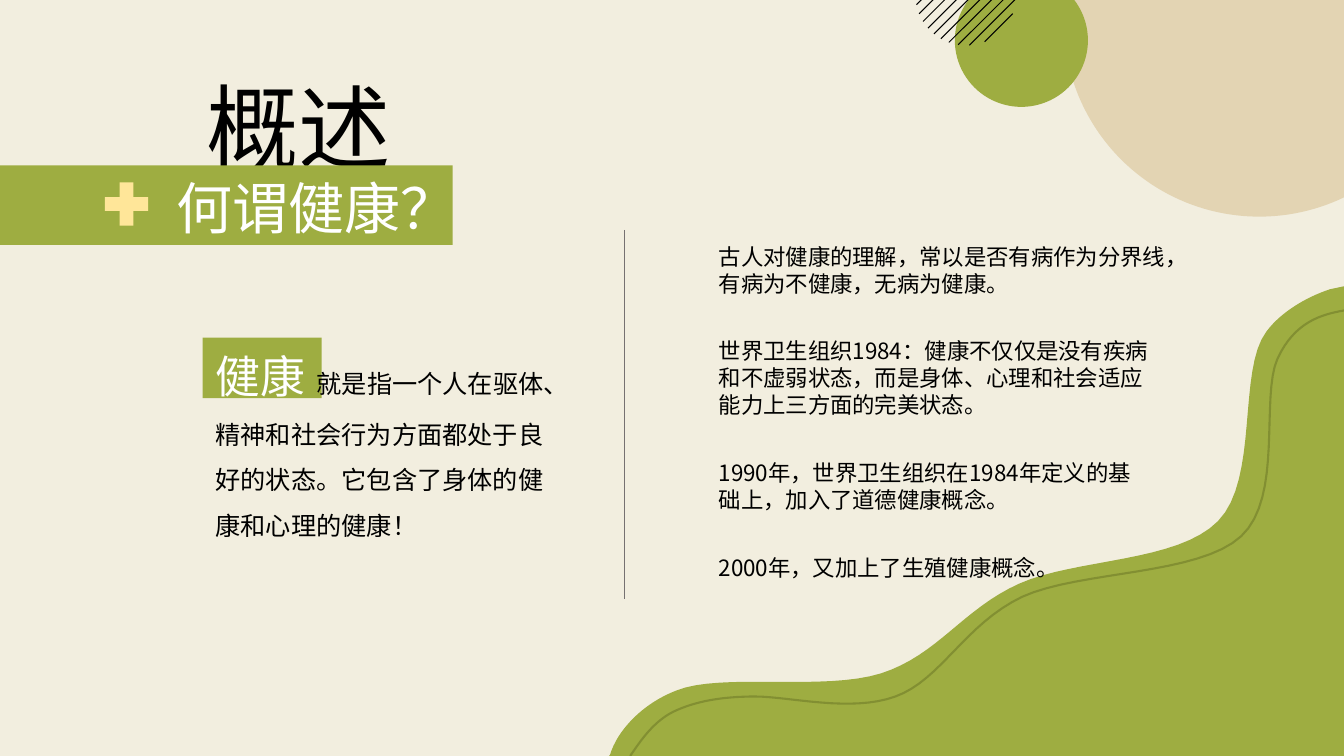
from dataclasses import dataclass
from math import acos, asin, cos, pi, sin, sqrt

from lxml.etree import SubElement
from pptx import Presentation
from pptx.dml.color import RGBColor
from pptx.enum.lang import MSO_LANGUAGE_ID
from pptx.enum.shapes import MSO_CONNECTOR, MSO_SHAPE
from pptx.enum.text import MSO_AUTO_SIZE, PP_ALIGN
from pptx.oxml.ns import qn
from pptx.util import Inches, Pt


@dataclass(frozen=True)
class Theme:
    cream: str = "F2EEDF"
    green: str = "9EAD41"
    moss: str = "828F32"
    sand: str = "E3D4B3"
    yellow: str = "FFE699"
    grey: str = "767171"
    black: str = "000000"
    white: str = "FFFFFF"
    font: str = "Noto Sans CJK SC"
    title_font: str = "Noto Sans CJK JP"
    title: int = 66
    heading: int = 40
    keyword: int = 32
    gap: int = 36
    lead: int = 18
    body: int = 16


THEME = Theme()
WIDTH, HEIGHT = 13.33, 7.5

# Each span is (text, size, colour)
TITLE = [("概述", THEME.title, THEME.black)]
HEADING = [("何谓健康？", THEME.heading, THEME.white)]
DEFINITION = [
    ("健康", THEME.keyword, THEME.white),
    (" ", THEME.gap, THEME.moss),
    ("就是指一个人在驱体、精神和社会行为方面都处于良好的状态。它包含了身体的健康和心理的健康！",
     THEME.lead, THEME.black),
]
# Each entry is (text, lines it fills, box width)
HISTORY = [
    ("古人对健康的理解，常以是否有病作为分界线，有病为不健康，无病为健康。", 2, 4.98),
    ("世界卫生组织1984：健康不仅仅是没有疾病和不虚弱状态，而是身体、心理和社会适应能力上三方面的完美状态。", 3, 4.49),
    ("1990年，世界卫生组织在1984年定义的基础上，加入了道德健康概念。", 2, 4.49),
    ("2000年，又加上了生殖健康概念。", 1, 3.9),
]
HISTORY_LEFT, HISTORY_TOP = 7.03, 2.36
LINE_HEIGHT, BOX_PADDING, HISTORY_GAP = 0.27, 0.1, 0.3

# A pair is a corner; six numbers are two curve handles and an end point
HILL = [
    (WIDTH, 2.84), (WIDTH, HEIGHT), (6.04, HEIGHT), (6.05, 7.49),
    (6.12, 7.25, 6.37, 6.98, 6.71, 6.85),
    (7.16, 6.67, 8.17, 6.86, 8.74, 6.68),
    (9.3, 6.5, 9.55, 6.04, 10.11, 5.79),
    (10.67, 5.54, 11.68, 5.58, 12.08, 5.17),
    (12.49, 4.75, 12.27, 3.67, 12.56, 3.29),
    (12.7, 3.1, 12.95, 2.95, 13.19, 2.87),
]
HILL_CONTOUR = [
    (6.25, HEIGHT),
    (6.36, 7.34, 6.48, 7.16, 6.68, 7.06),
    (6.89, 6.96, 7.15, 6.91, 7.49, 6.91),
    (7.83, 6.91, 8.44, 7.07, 8.88, 6.91),
    (9.33, 6.75, 9.57, 6.19, 10.14, 5.92),
    (10.71, 5.66, 11.89, 5.71, 12.31, 5.32),
    (12.73, 4.93, 12.5, 3.94, 12.67, 3.56),
    (12.84, 3.19, 13.11, 3.12, WIDTH, 3.08),
]
SUN_X, SUN_Y, SUN_RADIUS = 12.49, 0.21, 1.94
HATCH_X, HATCH_Y, HATCH_RADIUS = 9.58, -0.05, 0.5
HATCH_LINES, HATCH_STEP, HATCH_FIRST = 10, 0.058, 0.325
CURVE_STEPS = 16


def trace(outline):
    """Turn corners and cubic curves into a list of points."""
    points = []
    for part in outline:
        if len(part) == 2:
            points.append(part)
            continue
        knots = [points[-1], part[0:2], part[2:4], part[4:6]]
        for step in range(1, CURVE_STEPS + 1):
            t = step / CURVE_STEPS
            weights = ((1 - t) ** 3, 3 * t * (1 - t) ** 2, 3 * t * t * (1 - t), t ** 3)
            points.append(tuple(sum(w * knot[axis] for w, knot in zip(weights, knots))
                                for axis in (0, 1)))
    return points


def sun_outline():
    """Follow the circle's rim from the right slide edge to the top edge."""
    start = acos((WIDTH - SUN_X) / SUN_RADIUS)
    end = pi + asin(SUN_Y / SUN_RADIUS)
    count = 4 * CURVE_STEPS
    angles = [start + (end - start) * step / count for step in range(count + 1)]
    rim = [(SUN_X + SUN_RADIUS * cos(a), SUN_Y + SUN_RADIUS * sin(a)) for a in angles]
    return [(WIDTH, 0)] + rim


def paint(shape, colour):
    shape.shadow.inherit = False
    shape.fill.solid()
    shape.fill.fore_color.rgb = RGBColor.from_string(colour)
    shape.line.fill.background()
    return shape


def stroke(shape, colour, width):
    shape.line.color.rgb = RGBColor.from_string(colour)
    shape.line.width = Pt(width)


def add_block(slide, kind, colour, *place):
    return paint(slide.shapes.add_shape(kind, *map(Inches, place)), colour)


def add_outline(slide, points, close=True):
    start, *rest = [(Inches(x), Inches(y)) for x, y in points]
    builder = slide.shapes.build_freeform(*start)
    builder.add_line_segments(rest, close=close)
    return builder.convert_to_shape()


def add_line(slide, ends, colour, width):
    line = slide.shapes.add_connector(MSO_CONNECTOR.STRAIGHT, *map(Inches, ends))
    stroke(line, colour, width)
    SubElement(line._element.spPr, qn("a:effectLst"))


def add_text(slide, place, spans, font=THEME.font, wrap=True, **para_format):
    box = slide.shapes.add_textbox(*map(Inches, place))
    frame = box.text_frame
    frame.word_wrap = wrap
    frame.auto_size = MSO_AUTO_SIZE.SHAPE_TO_FIT_TEXT
    para = frame.paragraphs[0]
    for name, value in para_format.items():
        setattr(para, name, value)
    for text, size, colour in spans:
        span = para.add_run()
        span.text = text
        values = {"name": font, "size": Pt(size),
                  "language_id": MSO_LANGUAGE_ID.SIMPLIFIED_CHINESE}
        for name, value in values.items():
            setattr(span.font, name, value)
        span.font.color.rgb = RGBColor.from_string(colour)
        SubElement(span._r.get_or_add_rPr(), qn("a:ea"), typeface=font)


def add_history(slide):
    top = HISTORY_TOP
    for text, lines, width in HISTORY:
        height = lines * LINE_HEIGHT + BOX_PADDING
        add_text(slide, (HISTORY_LEFT, top, width, height),
                 [(text, THEME.body, THEME.black)])
        top += height + HISTORY_GAP


def add_hatching(slide):
    """Draw evenly spaced diagonal chords of a circle."""
    for index in range(HATCH_LINES):
        shift = HATCH_FIRST - index * HATCH_STEP
        half = sqrt(HATCH_RADIUS ** 2 / 2 - shift ** 2)
        x, y = HATCH_X + shift, HATCH_Y + shift
        add_line(slide, (x - half, y + half, x + half, y - half), THEME.black, 0.75)


def main():
    deck = Presentation()
    deck.slide_width, deck.slide_height = Inches(WIDTH), Inches(HEIGHT)
    slide = deck.slides.add_slide(deck.slide_layouts[6])
    slide.background.fill.solid()
    slide.background.fill.fore_color.rgb = RGBColor.from_string(THEME.cream)

    add_block(slide, MSO_SHAPE.RECTANGLE, THEME.green, 2.01, 3.35, 1.18, 0.6)
    paint(add_outline(slide, trace(HILL)), THEME.green)
    add_text(slide, (2.04, 3.06, 3.54, 2.37), DEFINITION, line_spacing=1.5)
    add_history(slide)
    add_line(slide, (6.19, 2.28, 6.19, 5.94), THEME.grey, 0.5)

    contour = add_outline(slide, trace(HILL_CONTOUR), close=False)
    contour.shadow.inherit = False
    contour.fill.background()
    stroke(contour, THEME.moss, 1.5)

    paint(add_outline(slide, sun_outline()), THEME.sand)
    add_text(slide, (1.95, 0.65, 2.19, 1.21), TITLE, THEME.title_font,
             alignment=PP_ALIGN.JUSTIFY)
    add_block(slide, MSO_SHAPE.OVAL, THEME.green, 9.47, -0.26, 1.32, 1.32)
    add_hatching(slide)

    add_block(slide, MSO_SHAPE.RECTANGLE, THEME.green, 0, 1.64, 4.49, 0.79)
    add_text(slide, (1.65, 1.67, 3.01, 0.77), HEADING, wrap=False)
    plus = add_block(slide, MSO_SHAPE.CROSS, THEME.yellow, 1.04, 1.81, 0.43, 0.43)
    plus.adjustments[0] = 0.34
    deck.save("out.pptx")


if __name__ == "__main__":
    main()
